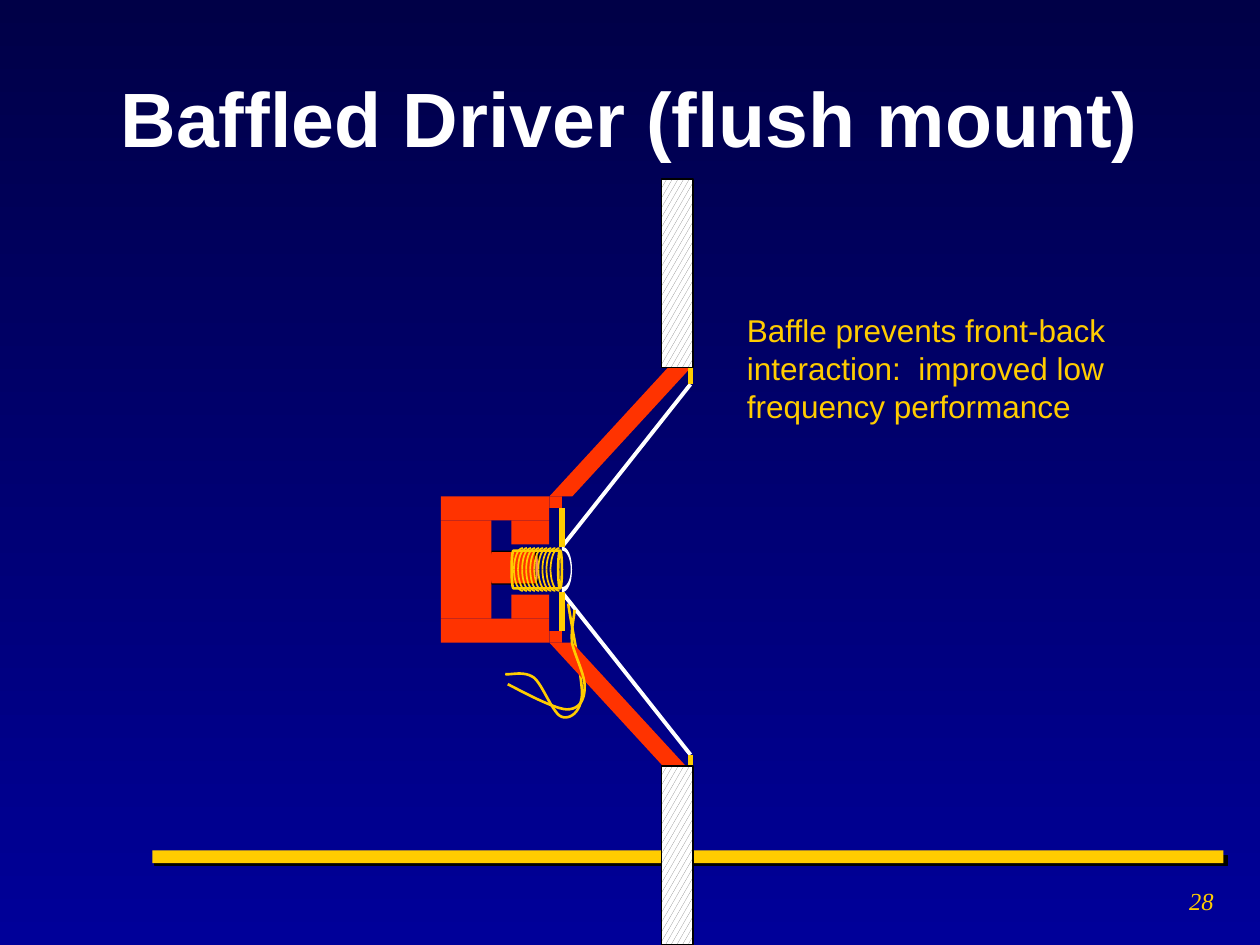
from dataclasses import dataclass
from pptx import Presentation
from pptx.dml.color import RGBColor
from pptx.enum.dml import MSO_PATTERN as Pattern
from pptx.enum.shapes import MSO_CONNECTOR as Link, MSO_SHAPE as Kind
from pptx.enum.text import MSO_ANCHOR as Anchor, PP_ALIGN as Align
from pptx.oxml.ns import qn
from pptx.util import Inches, Pt


@dataclass(frozen=True)
class Theme:
    """Colours, fonts and type sizes of the slide."""
    night: str = "000047"
    blue: str = "000099"
    gold: str = "FFCC00"
    red: str = "FF3300"
    white: str = "FFFFFF"
    black: str = "000000"
    grey: str = "808080"
    sans: str = "Arial"
    serif: str = "Times New Roman"
    head: int = 44
    note: int = 18
    page: int = 14


@dataclass(frozen=True)
class Box:
    """A region in inches that offsets the parts placed in it."""
    x: float
    y: float
    w: float
    h: float

    def cell(self, x, y, w, h):
        """Return a box placed inside this one."""
        return Box(self.x + x, self.y + y, w, h)

    def flip(self, y, h=0):
        """Mirror a vertical offset about the middle of the box."""
        return self.h - y - h

    def spot(self, x, y):
        """Return the absolute point of an offset."""
        return Inches(self.x + x), Inches(self.y + y)

    def frame(self):
        """Return left, top, width and height as lengths."""
        return [Inches(v) for v in (self.x, self.y, self.w, self.h)]


LOOK = Theme()


def tint(name):
    """Turn a hex string into a colour."""
    return RGBColor.from_string(name)


def paint(shape, fill=None, line=None, width=0.75):
    """Set the fill and outline of a shape."""
    shape.shadow.inherit = False
    if fill:
        shape.fill.solid()
        shape.fill.fore_color.rgb = tint(fill)
    else:
        shape.fill.background()
    if line:
        shape.line.color.rgb = tint(line)
        shape.line.width = Pt(width)
    else:
        shape.line.fill.background()


def block(shapes, box, kind=Kind.RECTANGLE, **style):
    """Add a preset shape filling the box."""
    shape = shapes.add_shape(kind, *box.frame())
    paint(shape, **style)
    return shape


def rule(shapes, start, end, hue, width):
    """Add a straight line without a shadow."""
    line = shapes.add_connector(Link.STRAIGHT, *start, *end)
    line.line.color.rgb = tint(hue)
    line.line.width = Pt(width)
    props = line._element.spPr
    props.append(props.makeelement(qn("a:effectLst"), {}))


def bend(start, *arcs, steps=12):
    """Trace a chain of cubic curves as a list of points."""
    points = [start]
    for arc in arcs:
        knots = (points[-1], *arc)
        for step in range(1, steps + 1):
            t = step / steps
            u = 1 - t
            mix = (u ** 3, 3 * u * u * t, 3 * u * t * t, t ** 3)
            points.append(tuple(sum(m * k[axis] for m, k in zip(mix, knots)) for axis in (0, 1)))
    return points


def trace(shapes, box, points, close=False, **style):
    """Draw an outline through points offset from the box."""
    spots = [box.spot(*point) for point in points]
    pen = shapes.build_freeform(*spots[0], scale=1.0)
    pen.add_line_segments(spots[1:], close=close)
    paint(pen.convert_to_shape(), **style)


def write(shape, text, face, size, hue, align, anchor=Anchor.TOP, bold=False, slant=False):
    """Fill a shape with one formatted paragraph."""
    frame = shape.text_frame
    frame.text = text
    frame.word_wrap = True
    frame.vertical_anchor = anchor
    para = frame.paragraphs[0]
    para.alignment = align
    font = para.runs[0].font
    font.name, font.size, font.bold, font.italic = face, Pt(size), bold, slant
    font.color.rgb = tint(hue)


def wash(slide):
    """Shade the background from dark at the top to blue."""
    fill = slide.background.fill
    fill.gradient()
    fill.gradient_angle = 270
    for stop, hue in zip(fill.gradient_stops, (LOOK.night, LOOK.blue)):
        stop.color.rgb = tint(hue)


def title(slide, box, text):
    """Place and format the title."""
    shape = slide.shapes.title
    shape.left, shape.top, shape.width, shape.height = box.frame()
    write(shape, text, LOOK.sans, LOOK.head, LOOK.white, Align.CENTER, Anchor.MIDDLE, bold=True)


def foot(slide, box, number):
    """Draw the gold bar with its shade and the page number."""
    block(slide.shapes, box.cell(0.02, 0.04, 8.51, 0.08), fill=LOOK.black, line=LOOK.black)
    block(slide.shapes, box.cell(0, 0, 8.5, 0.1), fill=LOOK.gold)
    page = slide.shapes.add_textbox(*box.cell(6.89, 0.23, 1.63, 0.52).frame())
    write(page, number, LOOK.serif, LOOK.page, LOOK.gold, Align.RIGHT, slant=True)


def coil(shapes, box):
    """Draw the core and the wound voice coil."""
    core = block(shapes, box.cell(0.45, 1.39, 0.26, 0.39), Kind.CAN, fill=LOOK.red, line=LOOK.black)
    tube = block(shapes, box.cell(0.61, 1.4, 0.3, 0.4), Kind.CAN, line=LOOK.gold, width=1.5)
    for can, depth in ((core, 0.12), (tube, 0.1)):
        can.rotation = 90
        can.adjustments[0] = depth
    for turn in range(10):
        x = 0.58 + turn * 0.29 / 9
        half = bend((x + 0.07, 1.43), ((x + 0.03, 1.43), (x, 1.51), (x, 1.6)))
        for points in (half, [(px, box.flip(py)) for px, py in half]):
            trace(shapes, box, points, line=LOOK.gold, width=1)


def driver(slide, box):
    """Draw the loudspeaker, mirrored about its middle."""
    shapes = slide.shapes.add_group_shape().shapes
    wire = dict(line=LOOK.gold, width=1.5)
    trace(shapes, box, bend(
        (0.51, 2.43), ((0.55, 2.44), (0.66, 2.4), (0.74, 2.46)),
        ((0.81, 2.52), (0.89, 2.75), (0.96, 2.77)), ((1.02, 2.79), (1.11, 2.74), (1.12, 2.59)),
        ((1.12, 2.44), (1.03, 2.02), (1.01, 1.87))), **wire)
    coil(shapes, box)
    block(shapes, box.cell(0, 1.21, 0.4, 0.78), fill=LOOK.red)
    for x, y, w, h in ((0.56, 1.21, 0.3, 0.19), (0, 1.02, 0.86, 0.19), (0.86, 1.02, 0.1, 0.09)):
        for top in (y, box.flip(y, h)):
            block(shapes, box.cell(x, top, w, h), fill=LOOK.red)
    lines = (((0.96, 1.42), (1.98, 0.13), LOOK.white, 2.25),
             ((0.96, 1.42), (0.96, 1.11), LOOK.gold, 3), ((1.98, 0.13), (1.98, 0), LOOK.gold, 3))
    for low in (False, True):
        top = box.flip(0, 1.02) if low else 0
        arm = block(shapes, box.cell(0.86, top, 1.12, 1.02), Kind.PARALLELOGRAM, fill=LOOK.red)
        arm.adjustments[0] = 0.92
        if low:
            arm._element.spPr.xfrm.set("flipV", "1")
        for *ends, hue, width in lines:
            start, end = (box.spot(x, box.flip(y) if low else y) for x, y in ends)
            rule(shapes, start, end, hue, width)
    inner = bend((0.96, 1.45), ((1, 1.45), (1.03, 1.52), (1.03, 1.6)),
                 ((1.03, 1.68), (1, 1.74), (0.96, 1.74)))
    outer = bend((0.96, 1.78), ((1.01, 1.78), (1.04, 1.7), (1.04, 1.6)),
                 ((1.04, 1.5), (1.01, 1.42), (0.96, 1.42)))
    trace(shapes, box, inner + outer, close=True, fill=LOOK.white)
    trace(shapes, box, bend(
        (0.53, 2.51), ((0.61, 2.55), (0.9, 2.71), (1, 2.71)),
        ((1.1, 2.71), (1.14, 2.63), (1.14, 2.54)), ((1.15, 2.45), (1.06, 2.28), (1.04, 2.18)),
        ((1.03, 2.07), (1.06, 1.97), (1.06, 1.92))), **wire)


def baffle(slide, box):
    """Draw the hatched wall above and below the driver."""
    for y, h in ((0, 1.5), (4.66, 1.42)):
        wall = block(slide.shapes, box.cell(0, y, box.w, h), line=LOOK.black)
        wall.fill.patterned()
        wall.fill.pattern = Pattern.LARGE_CONFETTI
        wall.fill.fore_color.rgb = tint(LOOK.grey)
        wall.fill.back_color.rgb = tint(LOOK.white)


def note(slide, box, text):
    """Add the comment beside the baffle."""
    shape = slide.shapes.add_textbox(*box.frame())
    write(shape, text, LOOK.sans, LOOK.note, LOOK.gold, Align.LEFT)


def main():
    """Build and save the slide."""
    deck = Presentation()
    deck.slide_width, deck.slide_height = Inches(10), Inches(7.5)
    slide = deck.slides.add_slide(deck.slide_layouts[5])
    wash(slide)
    foot(slide, Box(1.21, 6.75, 8.53, 0.75), "28")
    title(slide, Box(0.5, 0.3, 9, 1.25), "Baffled Driver (flush mount)")
    driver(slide, Box(3.5, 2.92, 2, 3.2))
    baffle(slide, Box(5.25, 1.42, 0.25, 6.08))
    note(slide, Box(5.83, 2.42, 3.5, 1.01),
         "Baffle prevents front-back interaction:  improved low frequency performance")
    deck.save("out.pptx")


if __name__ == "__main__":
    main()
